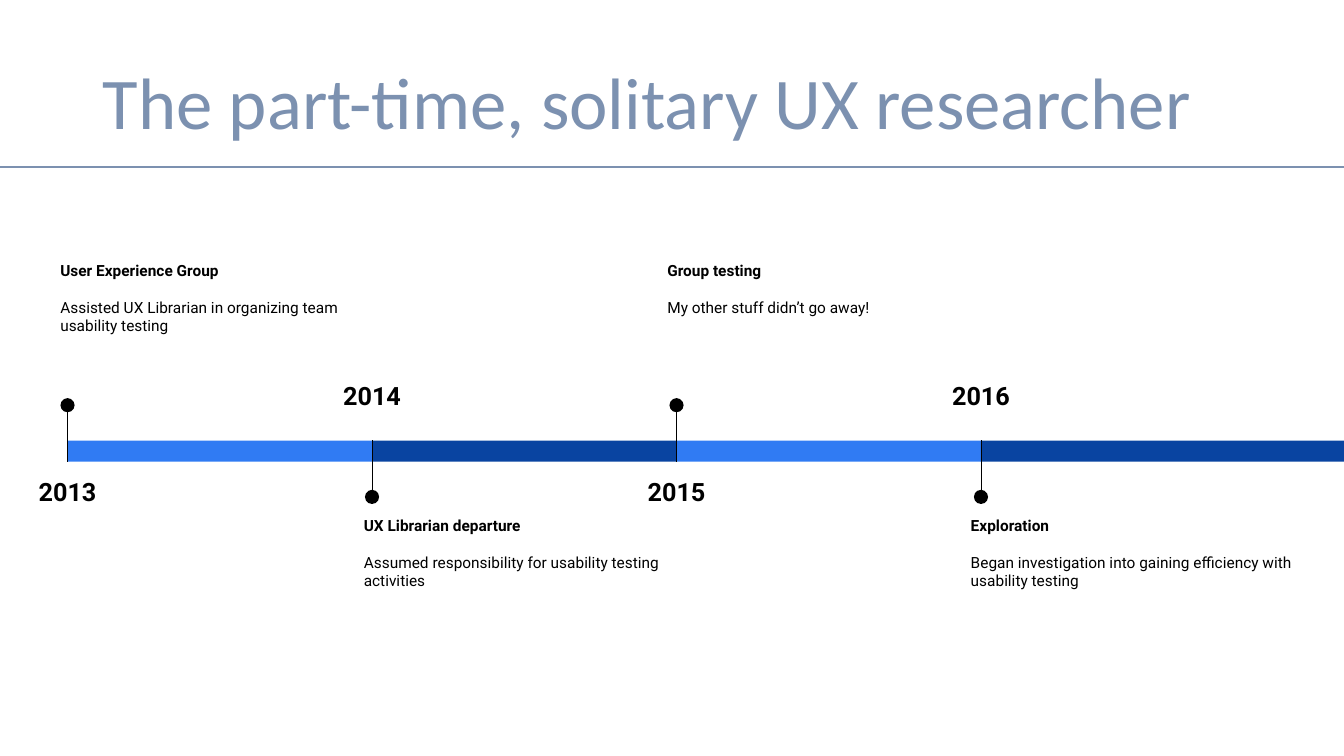
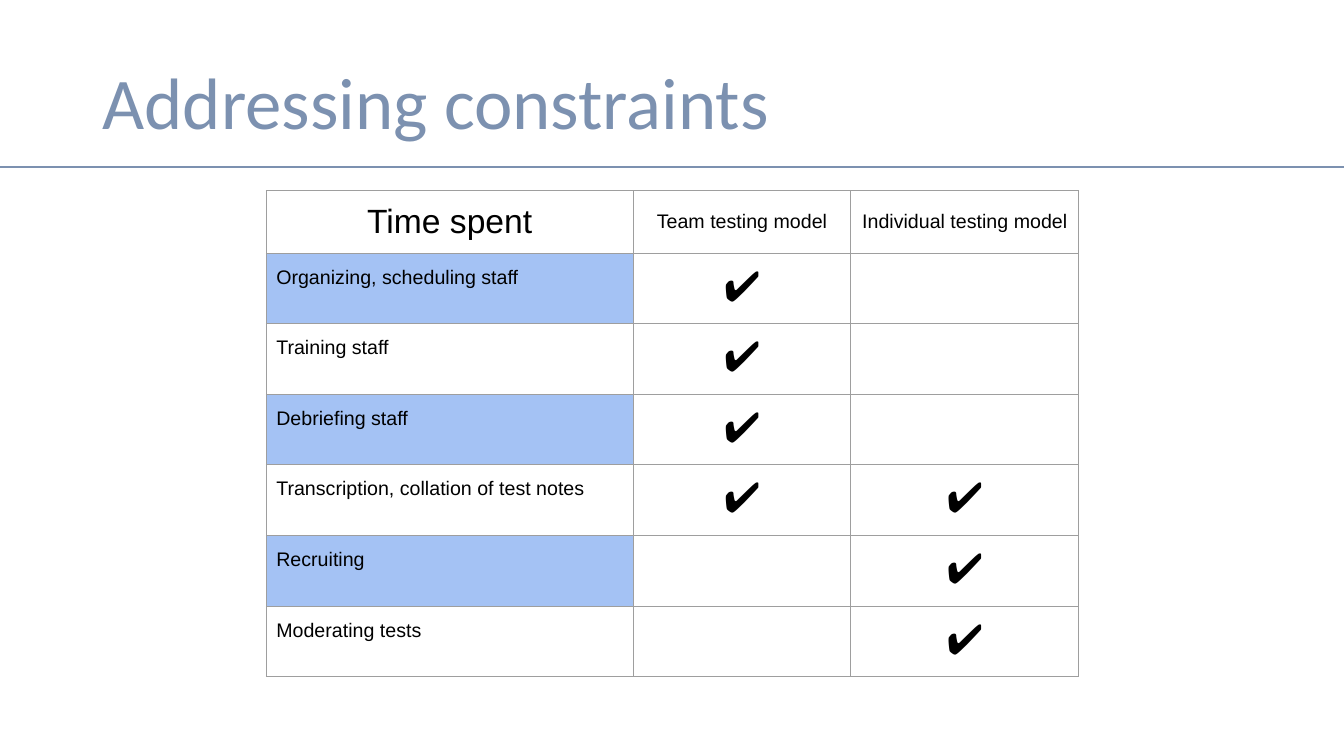
from lxml import etree
from pptx import Presentation
from pptx.dml.color import RGBColor
from pptx.enum.shapes import MSO_CONNECTOR, MSO_SHAPE
from pptx.enum.text import MSO_ANCHOR, PP_ALIGN
from pptx.oxml.ns import qn
from pptx.util import Inches, Pt

STRAIGHT = MSO_CONNECTOR.STRAIGHT
RECTANGLE, OVAL = MSO_SHAPE.RECTANGLE, MSO_SHAPE.OVAL
TOP, MIDDLE = MSO_ANCHOR.TOP, MSO_ANCHOR.MIDDLE
LEFT, CENTER = PP_ALIGN.LEFT, PP_ALIGN.CENTER

COLORS = {
    "title": "7C91B0", "text": "000000", "odd_year": "307BF3",
    "even_year": "0944A1", "row": "A4C2F4", "border": "9E9E9E",
}
RGB = {name: RGBColor.from_string(value) for name, value in COLORS.items()}
SLIDE_W, SLIDE_H = 13.33, 7.5
TITLES = ["The part-time, solitary UX researcher", "Addressing constraints"]


def add_rule(slide, x1, y1, x2, y2, color, width):
    rule = slide.shapes.add_connector(
        STRAIGHT, Inches(x1), Inches(y1), Inches(x2), Inches(y2))
    rule.line.color.rgb = RGB[color]
    rule.line.width = Pt(width)
    etree.SubElement(rule._element.spPr, qn("a:effectLst"))


def write(frame, lines, font, size, color="text", bold=False, align=LEFT,
          spacing=1.0, after=0, inset=0.1):
    """Fill a text frame or a table cell with paragraphs of one style."""
    frame.margin_left = frame.margin_right = Inches(0.1)
    frame.margin_top = frame.margin_bottom = Inches(inset)
    body = getattr(frame, "text_frame", frame)
    body.word_wrap = True
    body.text = "\n".join(lines)
    for paragraph in body.paragraphs:
        paragraph.alignment = align
        paragraph.line_spacing = spacing
        paragraph.space_after = Pt(after)
        paragraph.font.name = font
        paragraph.font.size = Pt(size)
        paragraph.font.bold = bold
        paragraph.font.color.rgb = RGB[color]
    return body.paragraphs


prs = Presentation()
prs.slide_width, prs.slide_height = Inches(SLIDE_W), Inches(SLIDE_H)

# Shared title and rule
slides = []
for title in TITLES:
    slide = prs.slides.add_slide(prs.slide_layouts[6])
    add_rule(slide, 0, 1.66, SLIDE_W, 1.66, "title", 1.5)
    heading = slide.shapes.add_textbox(
        Inches(0.92), Inches(0.59), Inches(11.5), Inches(0.92)).text_frame
    heading.vertical_anchor = MIDDLE
    write(heading, [title], "Calibri", 52, "title", spacing=0.9, inset=0.05)
    slides.append(slide)
timeline, comparison = slides

# Timeline: pins alternate above and below the bar
EVENTS = [
    ("2013", "User Experience Group",
     "Assisted UX Librarian in organizing team usability testing"),
    ("2014", "UX Librarian departure",
     "Assumed responsibility for usability testing activities"),
    ("2015", "Group testing", "My other stuff didn’t go away!"),
    ("2016", "Exploration",
     "Began investigation into gaining efficiency with usability testing"),
]
YEAR_X, YEAR_STEP = 0.67, 3.02
NOTE_X, NOTE_STEP = 0.5, 3.01
BAR_TOP, BAR_BOTTOM = 4.37, 4.58
STEM, DOT = 0.35, 0.14

for index, (year, event, detail) in enumerate(EVENTS):
    x = YEAR_X + index * YEAR_STEP
    pin_up = index % 2 == 0
    last = index == len(EVENTS) - 1
    bar_end = SLIDE_W if last else x + YEAR_STEP
    if pin_up:
        stem_top, stem_bottom = BAR_TOP - STEM, BAR_BOTTOM
        dot_y, year_y, note_y = stem_top, BAR_BOTTOM, 2.49
    else:
        stem_top, stem_bottom = BAR_TOP, BAR_BOTTOM + STEM
        dot_y, year_y, note_y = stem_bottom, 3.63, 5.02

    bar = (RECTANGLE, x, BAR_TOP, bar_end - x, BAR_BOTTOM - BAR_TOP,
           "odd_year" if pin_up else "even_year")
    dot = (OVAL, x - DOT / 2, dot_y - DOT / 2, DOT, DOT, "text")
    for kind, left, top, width, height, color in (bar, dot):
        mark = timeline.shapes.add_shape(
            kind, Inches(left), Inches(top), Inches(width), Inches(height))
        mark.shadow.inherit = False
        mark.fill.solid()
        mark.fill.fore_color.rgb = RGB[color]
        mark.line.fill.background()
    add_rule(timeline, x, stem_top, x, stem_bottom, "text", 0.75)

    year_label = timeline.shapes.add_textbox(
        Inches(x - 0.57), Inches(year_y), Inches(1.14), Inches(0.57))
    write(year_label.text_frame, [year], "Roboto", 18, bold=True,
          align=CENTER, spacing=1.15)
    note = timeline.shapes.add_textbox(
        Inches(NOTE_X + index * NOTE_STEP), Inches(note_y),
        Inches(3.47), Inches(1.46))
    event_line, detail_line = write(
        note.text_frame, [event, detail], "Roboto", 11)
    event_line.font.bold = True
    event_line.space_after = Pt(13)

# Comparison table: a task, then whether each model spends time on it
HEADERS = ["Time spent", "Team testing model", "Individual testing model"]
TASKS = [
    ("Organizing, scheduling staff", True, False),
    ("Training staff", True, False),
    ("Debriefing staff", True, False),
    ("Transcription, collation of test notes", True, True),
    ("Recruiting", False, True),
    ("Moderating tests", False, True),
]
CHECK = "✔️"
COLUMN_WIDTHS = [3.64, 2.16, 2.26]
ROW_HEIGHTS = [0.62, 0.66, 0.7, 0.66, 0.66, 0.66, 0.66]

rows = [HEADERS] + [
    [task] + [CHECK if spent else "" for spent in models]
    for task, *models in TASKS]
table = comparison.shapes.add_table(
    len(rows), len(HEADERS), Inches(2.64), Inches(1.89),
    Inches(sum(COLUMN_WIDTHS)), Inches(sum(ROW_HEIGHTS))).table
table.first_row = table.horz_banding = False
for column, width in zip(table.columns, COLUMN_WIDTHS):
    column.width = Inches(width)
for row, height in zip(table.rows, ROW_HEIGHTS):
    row.height = Inches(height)

for r, texts in enumerate(rows):
    for c, text in enumerate(texts):
        cell = table.cell(r, c)
        if r == 0:
            write(cell, [text], "Arial", 24 if c == 0 else 14, align=CENTER)
        elif c == 0:
            write(cell, [text], "Arial", 14, spacing=1.15)
        else:
            write(cell, [text], "Arial", 30 if text else 14, align=CENTER)
        cell.vertical_anchor = MIDDLE if r == 0 else TOP
        properties = cell._tc.get_or_add_tcPr()
        for side in ("lnL", "lnR", "lnT", "lnB"):
            border = etree.SubElement(
                properties, qn(f"a:{side}"), w=str(Pt(0.75)))
            border_fill = etree.SubElement(border, qn("a:solidFill"))
            etree.SubElement(
                border_fill, qn("a:srgbClr"), val=COLORS["border"])
        if c == 0 and r % 2 == 1:
            cell.fill.solid()
            cell.fill.fore_color.rgb = RGB["row"]
        else:
            cell.fill.background()

prs.save("out.pptx")
